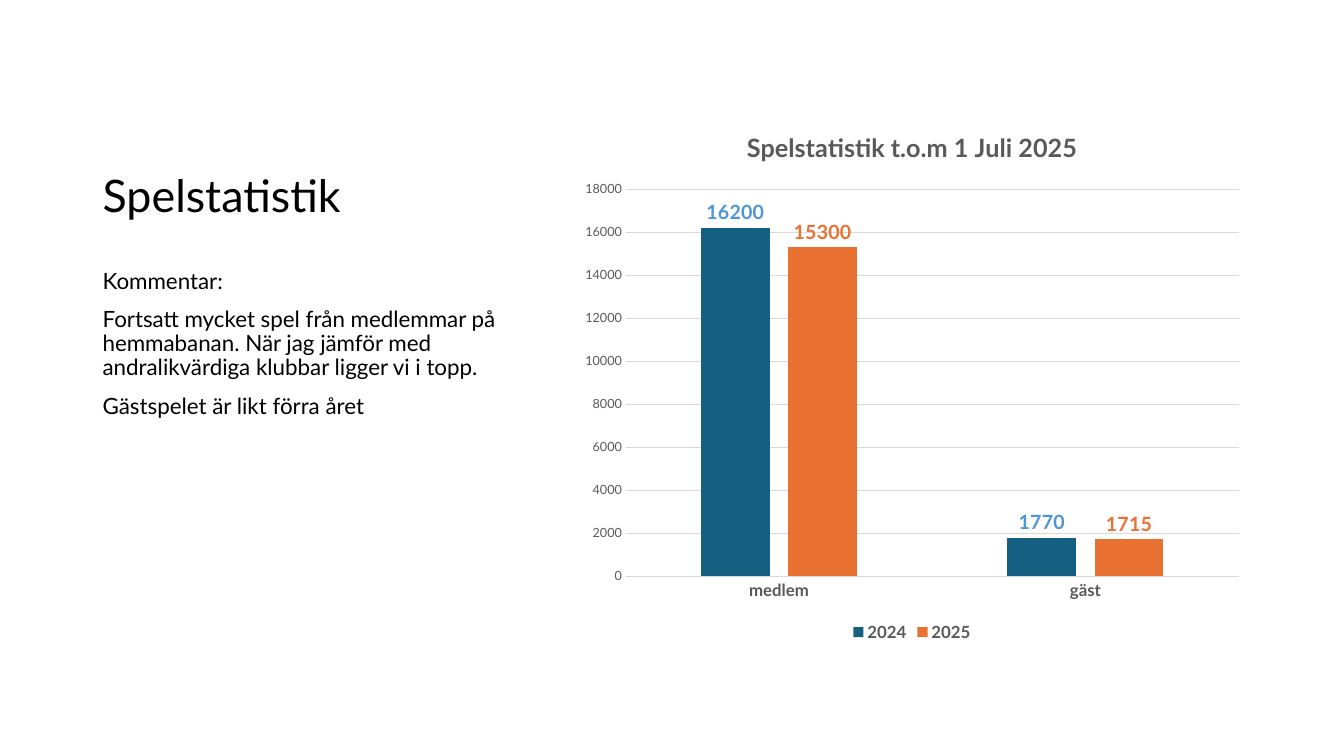
from pptx import Presentation
from pptx import util as u
from pptx.chart import data as chart_data
from pptx.dml.color import RGBColor
from pptx.enum import chart as charts, text

BLACK = RGBColor(0x00, 0x00, 0x00)
GREY = RGBColor(0x59, 0x59, 0x59)
RULE = RGBColor(0xD9, 0xD9, 0xD9)
TEAL = RGBColor(0x15, 0x60, 0x82)
BLUE = RGBColor(0x4E, 0x95, 0xD9)
ORANGE = RGBColor(0xE9, 0x71, 0x32)


class StatisticsPage:
    """Holds the style and the current slide, and adds elements to it."""

    font_name = "Lato"

    def __init__(self, deck):
        self.page = deck.slides.add_slide(deck.slide_layouts[6])

    def style(self, font, size, color, bold=False):
        font.name = self.font_name
        font.size = u.Pt(size)
        font.bold = bold
        font.color.rgb = color

    def text_box(self, place, lines, size, anchor=text.MSO_ANCHOR.TOP):
        box = self.page.shapes.add_textbox(*map(u.Inches, place))
        frame = box.text_frame
        frame.word_wrap = True
        frame.vertical_anchor = anchor
        frame.text = "\n".join(lines)
        for para in frame.paragraphs:
            para.line_spacing = 0.9
            para.space_after = u.Pt(10 if len(lines) > 1 else 0)
            for span in para.runs:
                self.style(span.font, size, BLACK)

    def rule(self, line):
        line.color.rgb = RULE
        line.width = u.Pt(0.75)

    def column_chart(self, place, title, categories, series):
        values = chart_data.CategoryChartData()
        values.categories = categories
        for name, numbers, _, _ in series:
            values.add_series(name, numbers)
        chart = self.page.shapes.add_chart(
            charts.XL_CHART_TYPE.COLUMN_CLUSTERED, *map(u.Inches, place), values
        ).chart
        self.style(chart.font, 10, BLACK)
        heading = chart.chart_title.text_frame
        heading.text = title
        self.style(heading.paragraphs[0].runs[0].font, 18, GREY, True)
        chart.has_legend = True
        chart.legend.position = charts.XL_LEGEND_POSITION.BOTTOM
        chart.legend.include_in_layout = False
        self.style(chart.legend.font, 12, GREY, True)
        self.axes(chart)
        plot = chart.plots[0]
        plot.gap_width = 219
        plot.overlap = -27
        plot.vary_by_categories = False
        for bars, (_, _, fill, label) in zip(plot.series, series):
            self.bars(bars, fill, label)

    def axes(self, chart):
        for axis in (chart.category_axis, chart.value_axis):
            axis.major_tick_mark = charts.XL_TICK_MARK.NONE
            axis.minor_tick_mark = charts.XL_TICK_MARK.NONE
        self.style(chart.category_axis.tick_labels.font, 12, GREY, True)
        self.rule(chart.category_axis.format.line)
        self.style(chart.value_axis.tick_labels.font, 9, GREY)
        chart.value_axis.format.line.fill.background()
        chart.value_axis.minimum_scale = 0
        chart.value_axis.maximum_scale = 18000
        chart.value_axis.major_unit = 2000
        self.rule(chart.value_axis.major_gridlines.format.line)

    def bars(self, bars, fill, label):
        bars.format.fill.solid()
        bars.format.fill.fore_color.rgb = fill
        bars.invert_if_negative = False
        labels = bars.data_labels
        labels.show_value = True
        labels.position = charts.XL_LABEL_POSITION.OUTSIDE_END
        self.style(labels.font, 14, label, True)


def main():
    deck = Presentation()
    deck.slide_width = u.Inches(13.33)
    deck.slide_height = u.Inches(7.5)
    page = StatisticsPage(deck)
    page.text_box(
        (0.92, 0.5, 4.3, 1.75), ["Spelstatistik"], 32, text.MSO_ANCHOR.BOTTOM
    )
    page.column_chart(
        (5.67, 1.08, 6.75, 5.33),
        "Spelstatistik t.o.m 1 Juli 2025",
        ["medlem", "gäst"],
        [
            ("2024", (16200, 1770), TEAL, BLUE),
            ("2025", (15300, 1715), ORANGE, ORANGE),
        ],
    )
    comments = [
        "Kommentar:",
        "Fortsatt mycket spel från medlemmar på hemmabanan. "
        "När jag jämför med andralikvärdiga klubbar ligger vi i topp.",
        "Gästspelet är likt förra året",
    ]
    page.text_box((0.92, 2.63, 4.3, 3.79), comments, 16)
    deck.save("out.pptx")


if __name__ == "__main__":
    main()
